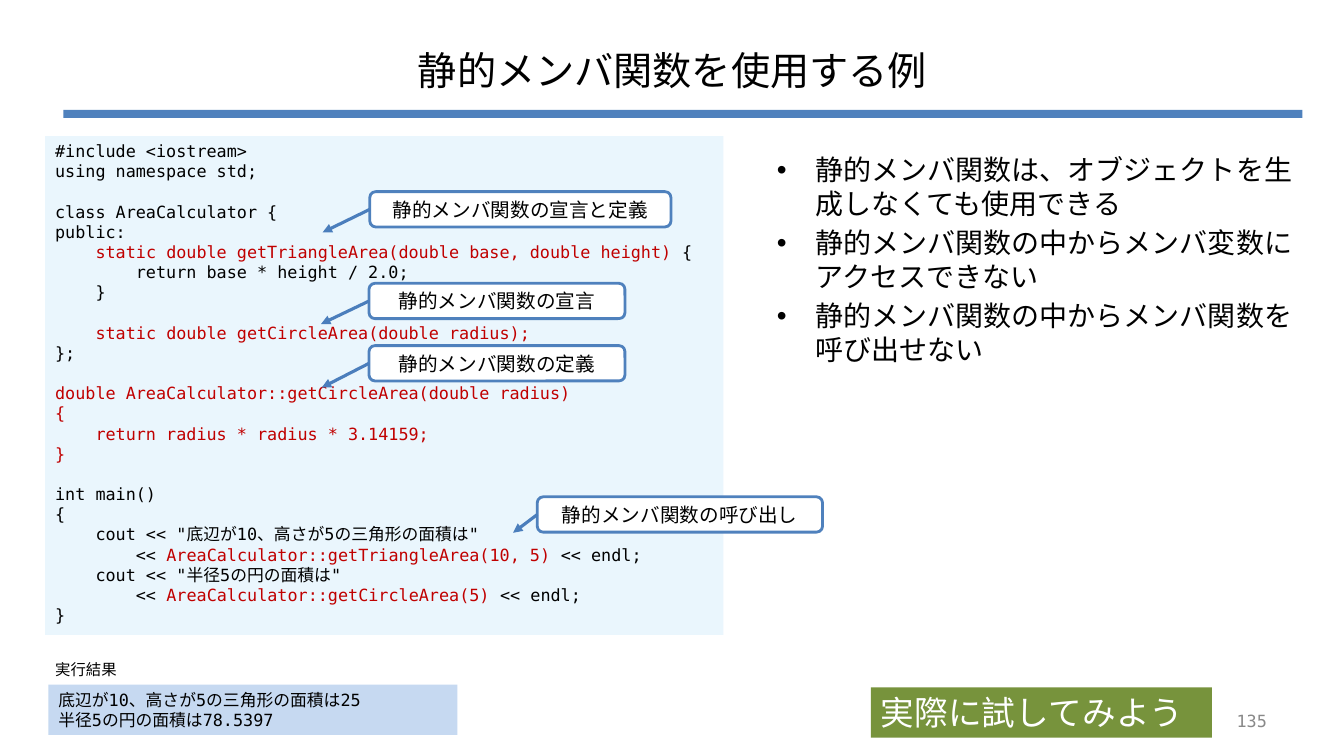
import dataclasses

import pptx
import pptx.dml.color
import pptx.enum.shapes
import pptx.enum.text
import pptx.oxml.ns
import pptx.util
from lxml import etree

Cm, Pt = pptx.util.Cm, pptx.util.Pt
SHAPE = pptx.enum.shapes.MSO_SHAPE
ALIGN = pptx.enum.text.PP_ALIGN
ANCHOR = pptx.enum.text.MSO_ANCHOR


@dataclasses.dataclass(frozen=True)
class Theme:
    ink: str = "000000"
    paper: str = "FFFFFF"
    accent: str = "4F81BD"
    arrow: str = "4B7EBC"
    highlight: str = "C00000"
    code_fill: str = "EAF6FD"
    result_fill: str = "C6D9F1"
    try_fill: str = "77933C"
    number: str = "898989"
    heading_font: str = "Arial"
    body_font: str = "Noto Sans CJK JP"
    code_font: str = "DejaVu Sans Mono"
    title_size: float = 28
    try_size: float = 24
    bullet_size: float = 20
    callout_size: float = 14
    code_size: float = 12
    label_size: float = 11


THEME = Theme()

CODE = """#include <iostream>
using namespace std;

class AreaCalculator {
public:
    |static double getTriangleArea(double base, double height) |{
        return base * height / 2.0;
    }

    |static double getCircleArea(double radius);|
};

|double AreaCalculator::getCircleArea(double radius)|
|{|
|    return radius * radius * 3.14159;|
|}|

int main()
{
    cout << "底辺が10、高さが5の三角形の面積は"
        << |AreaCalculator::getTriangleArea(10, 5) |<< endl;
    cout << "半径5の円の面積は"
        << |AreaCalculator::getCircleArea(5) |<< endl;
}"""

RESULT = "底辺が10、高さが5の三角形の面積は25\n半径5の円の面積は78.5397"

RULES = """静的メンバ関数は、オブジェクトを生成しなくても使用できる
静的メンバ関数の中からメンバ変数にアクセスできない
静的メンバ関数の中からメンバ関数を呼び出せない"""

# Label, box and arrow reach, in cm from the code panel's corner
CALLOUTS = [
    ("静的メンバ関数の宣言と定義", (8.18, 1.4, 7.59, 0.89), (-1.19, 0.58)),
    ("静的メンバ関数の呼び出し", (12.4, 9.09, 7.19, 0.89), (-0.61, 0.46)),
    ("静的メンバ関数の宣言", (8.16, 3.71, 6.45, 0.89), (-1.21, 0.58)),
    ("静的メンバ関数の定義", (8.16, 5.28, 6.45, 0.89), (-1.19, 0.61)),
]


def rgb(color):
    return pptx.dml.color.RGBColor.from_string(color)


def write_text(frame, text, *, size, font, color=THEME.ink, align=ALIGN.LEFT,
               anchor=ANCHOR.TOP, wrap=True, space=0, bullet=False):
    """Fill a frame; |bars| mark highlighted code, an empty line opens a gap."""
    frame.word_wrap = wrap
    frame.vertical_anchor = anchor
    paragraph, gap = None, 0
    for line in text.split("\n"):
        if not line:
            gap = size * 1.2
            continue
        first = paragraph is None
        paragraph = frame.paragraphs[0] if first else frame.add_paragraph()
        paragraph.alignment = align
        paragraph.space_before = Pt(0 if first else space + gap)
        gap = 0
        if bullet:
            add_bullet(paragraph)
        for index, part in enumerate(line.split("|")):
            if not part:
                continue
            run = paragraph.add_run()
            run.text = part
            run.font.size = Pt(size)
            run.font.name = font
            run.font.color.rgb = rgb(THEME.highlight if index % 2 else color)
            east_asian = etree.SubElement(run.font._element, pptx.oxml.ns.qn("a:ea"))
            east_asian.set("typeface", font)


def add_bullet(paragraph):
    properties = paragraph._p.get_or_add_pPr()
    properties.set("marL", str(Cm(0.97)))
    properties.set("indent", str(Cm(-0.97)))
    typeface = etree.SubElement(properties, pptx.oxml.ns.qn("a:buFont"))
    typeface.set("typeface", THEME.heading_font)
    mark = etree.SubElement(properties, pptx.oxml.ns.qn("a:buChar"))
    mark.set("char", "•")


def add_panel(slide, box, fill, line=None, kind=SHAPE.RECTANGLE):
    panel = slide.shapes.add_shape(kind, *map(Cm, box))
    panel.shadow.inherit = False
    panel.fill.solid()
    panel.fill.fore_color.rgb = rgb(fill)
    if line:
        panel.line.color.rgb = rgb(line)
        panel.line.width = Pt(2)
    else:
        panel.line.fill.background()
    return panel


def add_label(slide, box, text, **style):
    label = slide.shapes.add_textbox(*map(Cm, box))
    write_text(label.text_frame, text, **style)


def add_arrow(slide, x, y, reach):
    arrow = slide.shapes.add_connector(
        pptx.enum.shapes.MSO_CONNECTOR.STRAIGHT,
        Cm(x), Cm(y), Cm(x + reach[0]), Cm(y + reach[1]))
    arrow.line.color.rgb = rgb(THEME.arrow)
    arrow.line.width = Pt(2.25)
    head = etree.SubElement(arrow.line._get_or_add_ln(), pptx.oxml.ns.qn("a:tailEnd"))
    head.set("type", "triangle")
    etree.SubElement(arrow._element.spPr, pptx.oxml.ns.qn("a:effectLst"))


def build_header(slide, box):
    left, top, width, height = box
    add_panel(slide, (left, top + height, width, 0.2), THEME.accent)
    title = slide.shapes.title
    title.left, title.top = Cm(left + 0.13), Cm(top)
    title.width, title.height = Cm(width - 0.79), Cm(height)
    write_text(title.text_frame, "静的メンバ関数を使用する例", size=THEME.title_size,
               font=THEME.heading_font, align=ALIGN.CENTER, anchor=ANCHOR.MIDDLE)


def build_code(slide, box):
    listing = add_panel(slide, box, THEME.code_fill)
    write_text(listing.text_frame, CODE, size=THEME.code_size, font=THEME.code_font)
    for text, (dx, dy, width, height), reach in CALLOUTS:
        x, y = box[0] + dx, box[1] + dy
        callout = add_panel(slide, (x, y, width, height), THEME.paper,
                            THEME.accent, SHAPE.ROUNDED_RECTANGLE)
        write_text(callout.text_frame, text, size=THEME.callout_size,
                   font=THEME.body_font, align=ALIGN.CENTER, anchor=ANCHOR.MIDDLE)
        add_arrow(slide, x, y + height / 2, reach)


def build_result(slide, box):
    left, top, width, height = box
    caption = 0.74
    add_label(slide, (left, top, 2.08, caption), "実行結果", size=THEME.label_size,
              font=THEME.heading_font, wrap=False)
    output = add_panel(slide, (left + 0.08, top + caption, width - 0.08, height - caption),
                       THEME.result_fill)
    write_text(output.text_frame, RESULT, size=THEME.code_size, font=THEME.code_font)


def build_footer(slide, box):
    left, top, width, height = box
    invitation = add_panel(slide, (left, top, 8.59, height), THEME.try_fill)
    write_text(invitation.text_frame, "実際に試してみよう", size=THEME.try_size,
               font=THEME.code_font, color=THEME.paper)
    add_label(slide, (left + width - 7.9, top + 0.33, 7.9, 1.02), "135",
              size=THEME.code_size, font=THEME.code_font, color=THEME.number,
              align=ALIGN.RIGHT, anchor=ANCHOR.MIDDLE)


def main():
    deck = pptx.Presentation()
    deck.slide_width, deck.slide_height = Cm(33.87), Cm(19.05)
    slide = deck.slides.add_slide(deck.slide_layouts[5])
    build_header(slide, (1.6, 0.76, 31.22, 2.01))
    build_code(slide, (1.14, 3.43, 17.09, 12.57))
    build_result(slide, (1.14, 16.51, 10.39, 2.01))
    add_label(slide, (19.33, 3.73, 13.79, 6.78), RULES, size=THEME.bullet_size,
              font=THEME.body_font, space=THEME.bullet_size * 0.2, bullet=True)
    build_footer(slide, (21.95, 17.32, 10.23, 1.27))
    deck.save("out.pptx")


if __name__ == "__main__":
    main()
